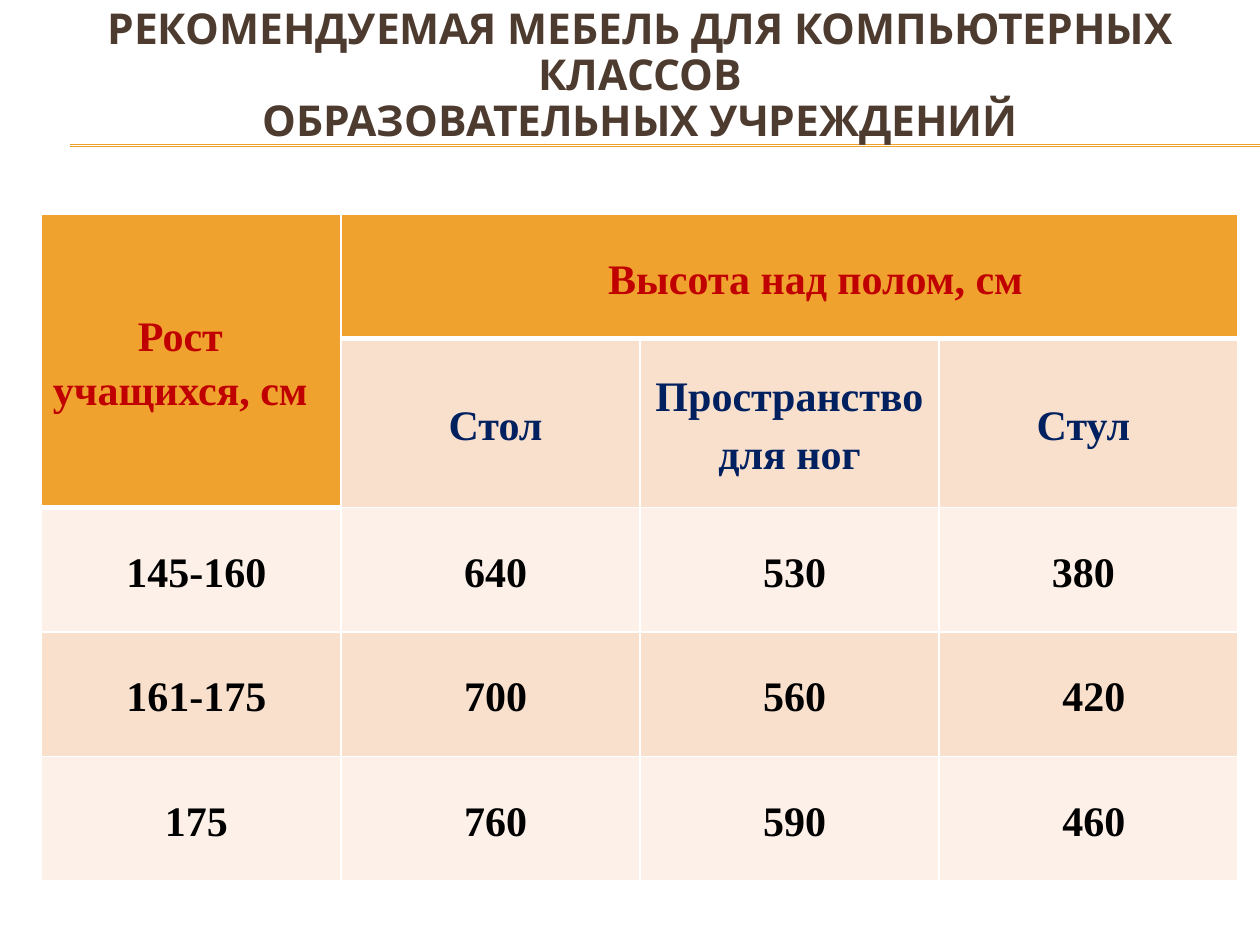
from lxml import etree
from pptx import Presentation
from pptx.dml.color import RGBColor
from pptx.enum.shapes import MSO_CONNECTOR
from pptx.enum.text import MSO_ANCHOR, PP_ALIGN
from pptx.oxml.ns import qn
from pptx.util import Cm, Pt

STRAIGHT = MSO_CONNECTOR.STRAIGHT
MIDDLE = MSO_ANCHOR.MIDDLE
CENTER = PP_ALIGN.CENTER

WHITE = RGBColor(0xFF, 0xFF, 0xFF)
BLACK = RGBColor(0x00, 0x00, 0x00)
BROWN = RGBColor(0x4E, 0x3B, 0x30)
GOLD = RGBColor(0xF0, 0xA2, 0x2E)
RED = RGBColor(0xC0, 0x00, 0x00)
NAVY = RGBColor(0x00, 0x20, 0x60)
PEACH = RGBColor(0xF9, 0xE0, 0xCD)
CREAM = RGBColor(0xFC, 0xF0, 0xE8)

TITLE = "РЕКОМЕНДУЕМАЯ МЕБЕЛЬ ДЛЯ КОМПЬЮТЕРНЫХ КЛАССОВ\vОБРАЗОВАТЕЛЬНЫХ УЧРЕЖДЕНИЙ"
ROWS = [
    ["Рост учащихся, см", "Высота над полом, см", "", ""],
    ["", "Стол", "Пространство\nдля ног", "Стул"],
    ["145-160", "640", "530", "380"],
    ["161-175", "700", "560", "420"],
    ["175", "760", "590", "460"],
]
HEIGHTS = [2.51, 3.4, 2.51, 2.51, 2.51]
WIDTH = 6.03
PAD = 0.08
NUDGE = 0.21
LEFT_PADS = {(0, 1): 1.05, (1, 2): 0, (1, 3): 0, (2, 3): 0, (0, 0): 0}
RIGHT_PADS = {(0, 0): 0.44, (1, 3): NUDGE, (2, 3): NUDGE}


def style(frame, font, size, color):
    for para in frame.paragraphs:
        para.alignment = CENTER
        for run in para.runs:
            run.font.name = font
            run.font.size = Pt(size)
            run.font.bold = True
            run.font.color.rgb = color


def add_title(slide):
    box = slide.shapes.add_textbox(Cm(0.84), Cm(0.53), Cm(24.13), Cm(3.07))
    frame = box.text_frame
    frame.word_wrap = True
    frame.vertical_anchor = MIDDLE
    frame.margin_bottom = Cm(1.17)
    frame.text = TITLE
    frame.paragraphs[0].line_spacing = 0.9
    style(frame, "Karla", 24.3, BROWN)


def add_rule(slide, top):
    rule = slide.shapes.add_connector(STRAIGHT, Cm(1.42), Cm(top), Cm(25.4), Cm(top))
    rule.line.color.rgb = GOLD
    rule.line.width = Pt(0.75)
    etree.SubElement(rule._element.spPr, qn("a:effectLst"))


def add_edge(cell, side, width):
    props = cell._tc.get_or_add_tcPr()
    edge = etree.SubElement(props, qn(f"a:ln{side}"), w=str(Pt(width)))
    fill = etree.SubElement(edge, qn("a:solidFill"))
    etree.SubElement(fill, qn("a:srgbClr"), val=str(WHITE))


def fill_cell(cell, row, col, text):
    head = row == 0 or (row, col) == (1, 0)
    for side in "LR":
        add_edge(cell, side, 1)
    if row == 0:
        add_edge(cell, "T", 1)
    add_edge(cell, "B", 3 if head else 1)
    cell.fill.solid()
    cell.fill.fore_color.rgb = GOLD if head else PEACH if row % 2 else CREAM

    cell.vertical_anchor = MIDDLE
    cell.margin_top = cell.margin_bottom = Cm(PAD)
    cell.margin_left = Cm(PAD + LEFT_PADS.get((row, col), NUDGE))
    cell.margin_right = Cm(PAD + RIGHT_PADS.get((row, col), 0))
    if text:
        cell.text_frame.text = text
        style(cell.text_frame, "Times New Roman", 24, RED if head else NAVY if row == 1 else BLACK)
        for para in cell.text_frame.paragraphs:
            para.line_spacing = 1.15
            para.space_before = para.space_after = Pt(1.4)


def add_grid(slide):
    count = len(ROWS[0])
    shape = slide.shapes.add_table(
        len(ROWS), count, Cm(0.84), Cm(4.32), Cm(WIDTH * count), Cm(sum(HEIGHTS))
    )
    table = shape.table
    table.first_row = table.horz_banding = False
    for col in table.columns:
        col.width = Cm(WIDTH)
    for row, height in zip(table.rows, HEIGHTS):
        row.height = Cm(height)
    for row, texts in enumerate(ROWS):
        for col, text in enumerate(texts):
            fill_cell(table.cell(row, col), row, col, text)
    table.cell(0, 0).merge(table.cell(1, 0))
    table.cell(0, 1).merge(table.cell(0, 3))


def main():
    deck = Presentation()
    deck.slide_width, deck.slide_height = Cm(25.4), Cm(19.05)
    slide = deck.slides.add_slide(deck.slide_layouts[6])
    for top in (2.92, 2.95):
        add_rule(slide, top)
    add_title(slide)
    add_grid(slide)
    deck.save("out.pptx")


if __name__ == "__main__":
    main()
